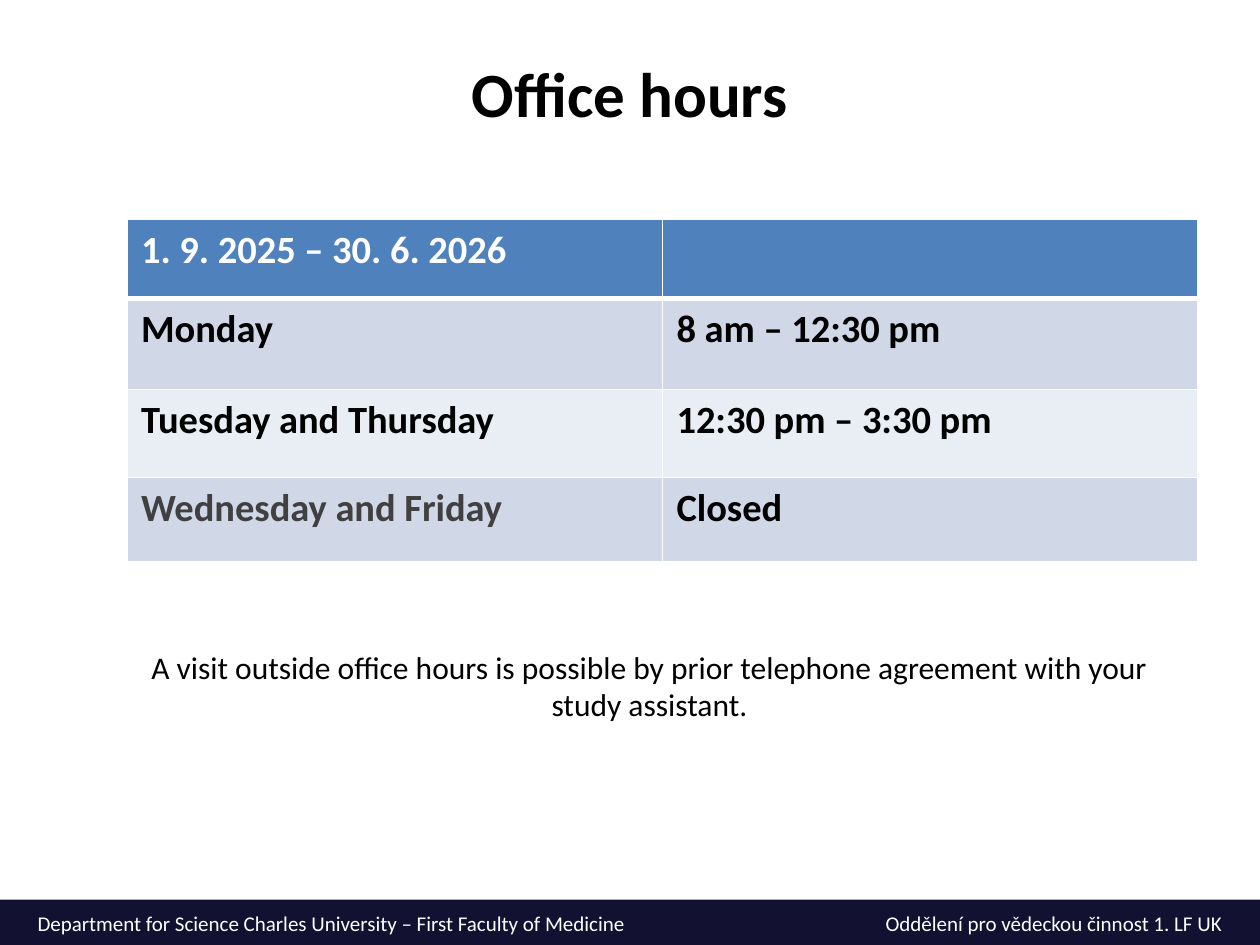
import pptx
import pptx.util
import pptx.dml.color
import pptx.enum.shapes
import pptx.enum.text
import pptx.oxml
import pptx.oxml.ns

Inches, Pt = pptx.util.Inches, pptx.util.Pt
RGBColor = pptx.dml.color.RGBColor
ALIGN = pptx.enum.text.PP_ALIGN
TOP = pptx.enum.text.MSO_ANCHOR.TOP

# Content
TITLE = "Office hours"
HOURS = [
    ("1. 9. 2025 – 30. 6. 2026", ""),
    ("Monday", "8 am – 12:30 pm"),
    ("Tuesday and Thursday", "12:30 pm – 3:30 pm"),
    ("Wednesday and Friday", "Closed"),
]
ROW_HEIGHTS = [0.63, 0.72, 0.7, 0.67]
COLUMN_WIDTH = 4.25
NOTE = ("A visit outside office hours is possible by prior telephone "
        "agreement with your study assistant.")
DEPARTMENT = "Department for Science Charles University – First Faculty of Medicine"
DEPARTMENT_CZECH = "Oddělení pro vědeckou činnost 1. LF UK"

# Style
FONT = "Calibri"
BLACK = RGBColor(0x00, 0x00, 0x00)
WHITE = RGBColor(0xFF, 0xFF, 0xFF)
GREY = RGBColor(0x40, 0x40, 0x40)
NAVY = RGBColor(0x12, 0x11, 0x31)
HEADER_BLUE = RGBColor(0x4F, 0x81, 0xBD)
BANDS = [RGBColor(0xE9, 0xED, 0xF4), RGBColor(0xD0, 0xD8, 0xE8)]


def write(frame, text, size, color, align=ALIGN.LEFT, bold=False):
    frame.text = text
    frame.word_wrap = True
    para = frame.paragraphs[0]
    para.alignment = align
    para.space_before = Pt(0)
    for span in para.runs:
        span.font.name = FONT
        span.font.size = Pt(size)
        span.font.bold = bold
        span.font.color.rgb = color


def add_text(page, place, *style):
    box = page.shapes.add_textbox(*map(Inches, place))
    write(box.text_frame, *style)


def set_borders(cell, widths):
    properties = cell._tc.get_or_add_tcPr()
    for index, (side, width) in enumerate(widths.items()):
        properties.insert(index, pptx.oxml.parse_xml(
            f'<a:ln{side} {pptx.oxml.ns.nsdecls("a")} w="{Pt(width)}">'
            f'<a:solidFill><a:srgbClr val="{WHITE}"/></a:solidFill></a:ln{side}>'))


def add_hours_table(page):
    table = page.shapes.add_table(
        len(HOURS), 2, Inches(1.01), Inches(1.74),
        Inches(2 * COLUMN_WIDTH), Inches(sum(ROW_HEIGHTS))).table
    for column in table.columns:
        column.width = Inches(COLUMN_WIDTH)
    for r, (texts, height) in enumerate(zip(HOURS, ROW_HEIGHTS)):
        table.rows[r].height = Inches(height)
        for c, text in enumerate(texts):
            cell = table.cell(r, c)
            cell.margin_left = cell.margin_right = Inches(0.11)
            cell.margin_top = cell.margin_bottom = Inches(0.06)
            cell.fill.solid()
            cell.fill.fore_color.rgb = HEADER_BLUE if r == 0 else BANDS[r % 2]
            color = WHITE if r == 0 else BLACK
            if text == "Wednesday and Friday":
                color = GREY
            write(cell.text_frame, text, 22, color, bold=True)
            # The rule below the header is heavier
            set_borders(cell, {"L": 1, "R": 1, "T": 3 if r == 1 else 1,
                               "B": 3 if r == 0 else 1})


def main():
    deck = pptx.Presentation()
    deck.slide_width, deck.slide_height = Inches(10), Inches(7.5)
    page = deck.slides.add_slide(deck.slide_layouts[5])

    # Footer band
    band = page.shapes.add_shape(
        pptx.enum.shapes.MSO_SHAPE.RECTANGLE,
        Inches(0), Inches(7.14), Inches(10), Inches(0.36))
    band.shadow.inherit = False
    band.fill.solid()
    band.fill.fore_color.rgb = NAVY
    band.line.fill.background()

    # Title
    title = page.shapes.title
    title.left, title.top = Inches(0.51), Inches(0.38)
    title.width, title.height = Inches(8.98), Inches(1.35)
    write(title.text_frame, TITLE, 36, BLACK, ALIGN.CENTER, True)
    title.text_frame.vertical_anchor = TOP

    # Office hours and note
    add_hours_table(page)
    add_text(page, (0.92, 5.09, 8.47, 1.01), NOTE, 18, BLACK, ALIGN.CENTER)

    # Footer texts
    add_text(page, (0.2, 7.18, 4.96, 0.27), DEPARTMENT, 12, WHITE)
    add_text(page, (5.63, 7.18, 4.17, 0.27), DEPARTMENT_CZECH, 12, WHITE, ALIGN.RIGHT)

    deck.save("out.pptx")


if __name__ == "__main__":
    main()
